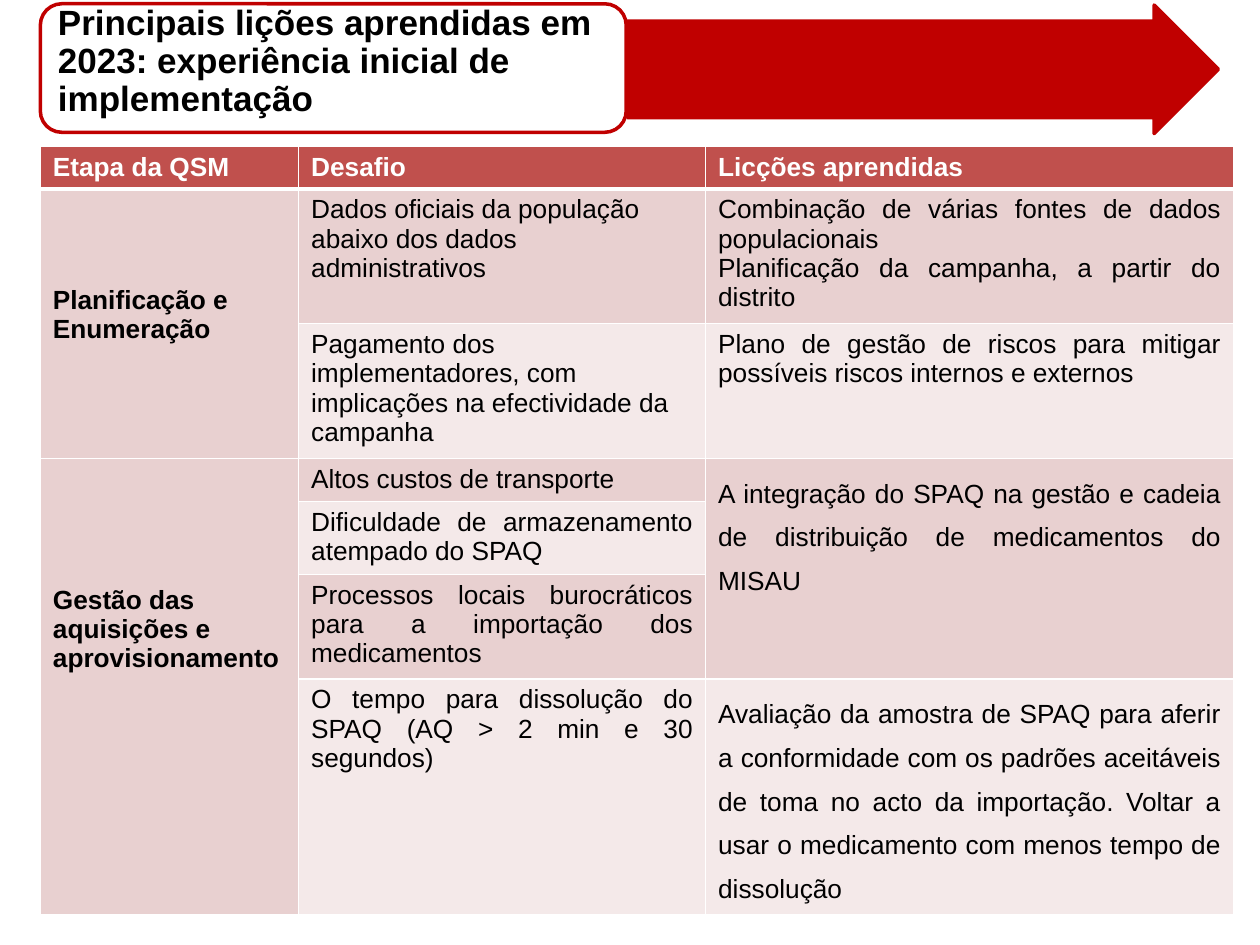
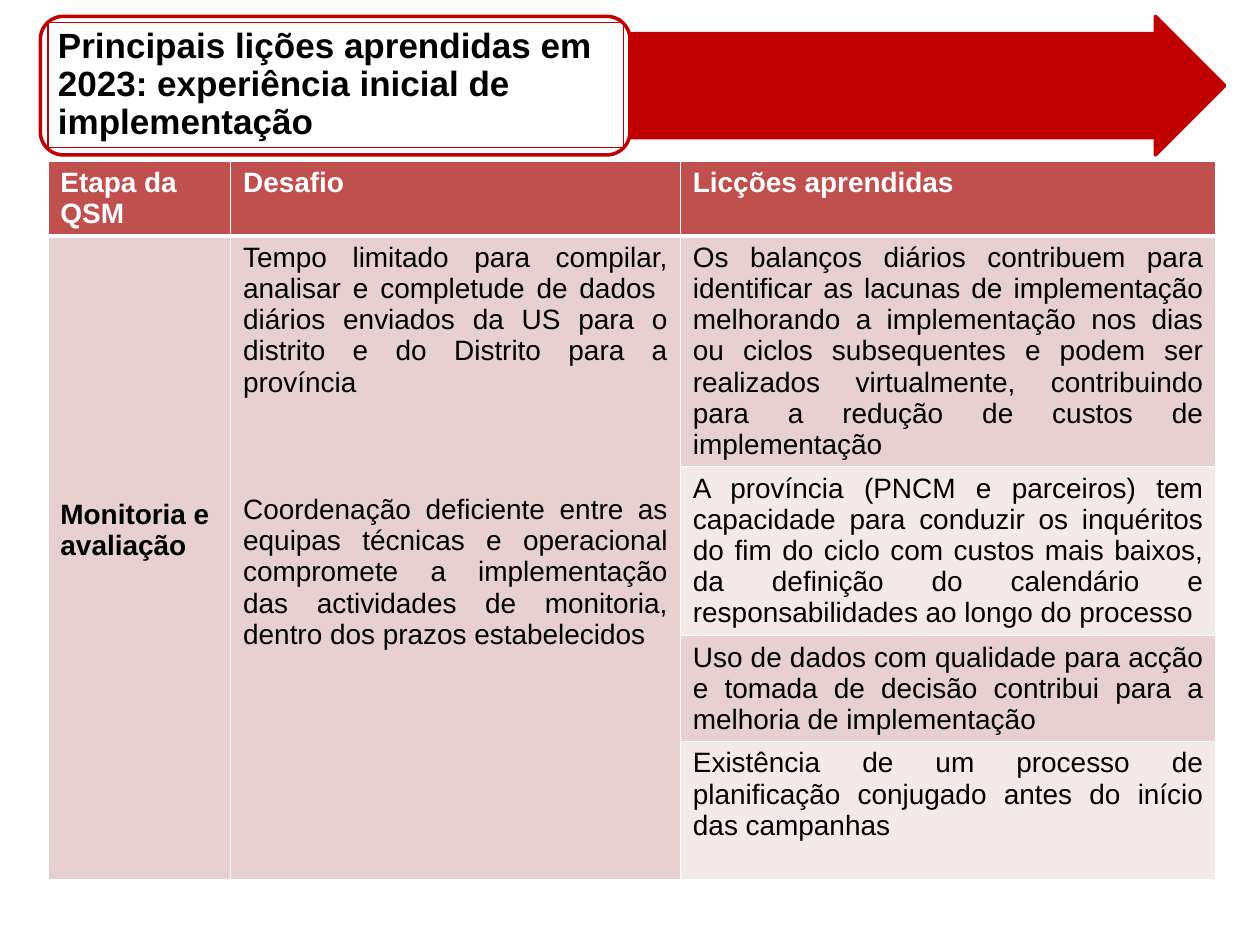
from dataclasses import dataclass

from pptx import Presentation
from pptx.dml.color import RGBColor
from pptx.enum.shapes import MSO_SHAPE as Shape
from pptx.enum.text import MSO_ANCHOR as Anchor, MSO_AUTO_SIZE as AutoSize, PP_ALIGN as Align
from pptx.oxml import parse_xml
from pptx.oxml.ns import nsdecls
from pptx.util import Inches, Pt

FONT = "Arial"
RED, HEADER, WHITE, BLACK = "C00000", "C0504D", "FFFFFF", "000000"
BANDS = ("F4E9E9", "E8D0D0")  # even rows, odd rows
TITLE = "Principais lições aprendidas em 2023: experiência inicial de implementação"
HEADINGS = ("Etapa da QSM", "Desafio", "Licções aprendidas")
LINE_HEIGHT = 1.15  # of the font size
CELL_TOP = 0.05


@dataclass
class Box:
    left: float
    top: float
    width: float
    height: float

    def emu(self) -> list:
        return [Inches(v) for v in (self.left, self.top, self.width, self.height)]


@dataclass
class Banner:
    arrow: Box
    frame: Box
    title: Box
    outlined: bool = False


@dataclass
class Entry:
    """Text of a body cell; lines_above and gap_lines count blank line heights."""
    row: int
    col: int
    paragraphs: list[str]
    rows: int = 1
    justified: bool = True
    spacing: float = 1.0
    lines_above: int = 0
    gap_lines: int = 0


@dataclass
class Grid:
    left: float
    top: float
    size: int
    cols: list[float]
    rows: list[float]
    entries: list[Entry]


def rgb(value: str) -> RGBColor:
    return RGBColor.from_string(value)


def style_font(font, size: float, color: str, bold: bool) -> None:
    font.name, font.size, font.bold = FONT, Pt(size), bold
    font.color.rgb = rgb(color)


def add_block(s, kind, box: Box, fill: str):
    sp = s.shapes.add_shape(kind, *box.emu())
    sp.shadow.inherit = False
    sp.fill.solid()
    sp.fill.fore_color.rgb = rgb(fill)
    sp.line.color.rgb = rgb(RED)
    sp.line.width = Pt(2)
    return sp


def add_banner(s, banner: Banner) -> None:
    arrow = add_block(s, Shape.RIGHT_ARROW, banner.arrow, RED)
    arrow.adjustments[0], arrow.adjustments[1] = 0.75, 0.5
    add_block(s, Shape.ROUNDED_RECTANGLE, banner.frame, WHITE)

    title = s.shapes.title
    title.left, title.top, title.width, title.height = banner.title.emu()
    title.element.getparent().append(title.element)  # bring above the frame
    if banner.outlined:
        title.line.color.rgb = rgb(RED)
        title.line.width = Pt(0.75)
    tf = title.text_frame
    tf.text = TITLE
    tf.word_wrap, tf.auto_size = True, AutoSize.NONE
    tf.vertical_anchor = Anchor.MIDDLE
    tf.margin_left = tf.margin_right = Inches(0.08)
    tf.margin_top = tf.margin_bottom = Inches(0.04)
    p = tf.paragraphs[0]
    p.alignment, p.line_spacing = Align.LEFT, 0.9
    style_font(p.font, 20, BLACK, True)


def style_cell(cell, row: int) -> None:
    """Set white borders, thick under the header, and the band colour."""
    widths = {"L": 1, "R": 1, "T": 3 if row == 1 else 1, "B": 3 if row == 0 else 1}
    tc_pr = cell._tc.get_or_add_tcPr()
    for side, width in widths.items():
        tc_pr.append(parse_xml(
            f'<a:ln{side} {nsdecls("a")} w="{Pt(width)}"><a:solidFill>'
            f'<a:srgbClr val="{WHITE}"/></a:solidFill></a:ln{side}>'))
    cell.fill.solid()
    cell.fill.fore_color.rgb = rgb(BANDS[row % 2] if row else HEADER)


def write_entry(table, entry: Entry, size: int) -> None:
    cell = table.cell(entry.row, entry.col)
    if entry.rows > 1:
        cell.merge(table.cell(entry.row + entry.rows - 1, entry.col))
    line = size * LINE_HEIGHT
    cell.margin_top = Inches(round(CELL_TOP + entry.lines_above * line / 72, 2))
    tf = cell.text_frame
    tf.text = "\n".join(entry.paragraphs)
    is_header = entry.row == 0
    for i, p in enumerate(tf.paragraphs):
        p.alignment = Align.JUSTIFY if entry.justified else Align.LEFT
        p.line_spacing = entry.spacing
        if i and entry.gap_lines:
            p.space_before = Pt(entry.gap_lines * line)
        style_font(p.font, size, WHITE if is_header else BLACK, is_header or entry.col == 0)


def add_grid(s, grid: Grid) -> None:
    box = Box(grid.left, grid.top, sum(grid.cols), sum(grid.rows))
    table = s.shapes.add_table(len(grid.rows), len(grid.cols), *box.emu()).table
    table.horz_banding = False
    for column, width in zip(table.columns, grid.cols):
        column.width = Inches(width)
    for r, height in enumerate(grid.rows):
        table.rows[r].height = Inches(height)
        for cell in table.rows[r].cells:
            style_cell(cell, r)
    headings = [Entry(0, c, [text], justified=False) for c, text in enumerate(HEADINGS)]
    for entry in headings + grid.entries:
        write_entry(table, entry, grid.size)


PLANNING = Grid(0.32, 1.16, 15, [2.05, 3.23, 4.19], [0.34, 1.07, 1.07, 0.34, 0.58, 0.83, 1.87], [
    Entry(1, 0, ["Planificação e Enumeração"], rows=2, justified=False, lines_above=3),
    Entry(1, 1, ["Dados oficiais da população", "abaixo dos dados administrativos"], justified=False),
    Entry(1, 2, ["Combinação de várias fontes de dados populacionais",
                 "Planificação da campanha, a partir do distrito"]),
    Entry(2, 1, ["Pagamento dos implementadores, com implicações na efectividade da campanha"],
          justified=False),
    Entry(2, 2, ["Plano de gestão de riscos para mitigar possíveis riscos internos e externos"]),
    Entry(3, 0, ["Gestão das aquisições e aprovisionamento"], rows=4, justified=False, lines_above=4),
    Entry(3, 1, ["Altos custos de transporte"], justified=False),
    Entry(3, 2, ["A integração do SPAQ na gestão e cadeia de distribuição de medicamentos do MISAU"],
          rows=3, spacing=1.5),
    Entry(4, 1, ["Dificuldade de armazenamento atempado do SPAQ"]),
    Entry(5, 1, ["Processos locais burocráticos para a importação dos medicamentos"]),
    Entry(6, 1, ["O tempo para dissolução do SPAQ (AQ > 2 min e 30 segundos)"]),
    Entry(6, 2, ["Avaliação da amostra de SPAQ para aferir a conformidade com os padrões aceitáveis "
                 "de toma no acto da importação. Voltar a usar o medicamento com menos tempo de "
                 "dissolução"], spacing=1.5),
])

MONITORING = Grid(0.38, 1.28, 16, [1.45, 3.57, 4.25], [0.59, 1.83, 1.34, 0.84, 1.1], [
    Entry(1, 0, ["Monitoria e avaliação"], rows=4, justified=False, lines_above=8),
    Entry(1, 1, ["Tempo limitado para compilar, analisar e completude de dados  diários enviados da "
                 "US para o distrito e do Distrito para a província",
                 "Coordenação deficiente entre as equipas técnicas e operacional compromete a "
                 "implementação das actividades de monitoria, dentro dos prazos estabelecidos"],
          rows=4, gap_lines=3),
    Entry(1, 2, ["Os balanços diários contribuem para identificar as lacunas de implementação "
                 "melhorando a implementação nos dias ou ciclos subsequentes e podem ser realizados "
                 "virtualmente, contribuindo para a redução de custos de implementação"]),
    Entry(2, 2, ["A província (PNCM e parceiros) tem capacidade para conduzir os inquéritos do fim do "
                 "ciclo com custos mais baixos, da definição do calendário e responsabilidades ao "
                 "longo do processo"]),
    Entry(3, 2, ["Uso de dados com qualidade para acção e tomada de decisão contribui para a melhoria "
                 "de implementação"]),
    Entry(4, 2, ["Existência de um processo de planificação conjugado antes do início das campanhas"]),
])

SLIDES = [
    (Banner(Box(4.98, 0.04, 4.69, 1.02), Box(0.32, 0.03, 4.65, 1.02), Box(0.38, 0.13, 4.54, 0.73)),
     PLANNING),
    (Banner(Box(5, 0.13, 4.72, 1.1), Box(0.32, 0.13, 4.68, 1.1), Box(0.38, 0.18, 4.57, 0.99),
            outlined=True), MONITORING),
]


def main() -> None:
    prs = Presentation()
    prs.slide_width, prs.slide_height = Inches(10), Inches(7.5)
    for banner, grid in SLIDES:
        s = prs.slides.add_slide(prs.slide_layouts[5])  # title only
        add_banner(s, banner)
        add_grid(s, grid)
    prs.save("out.pptx")


if __name__ == "__main__":
    main()
